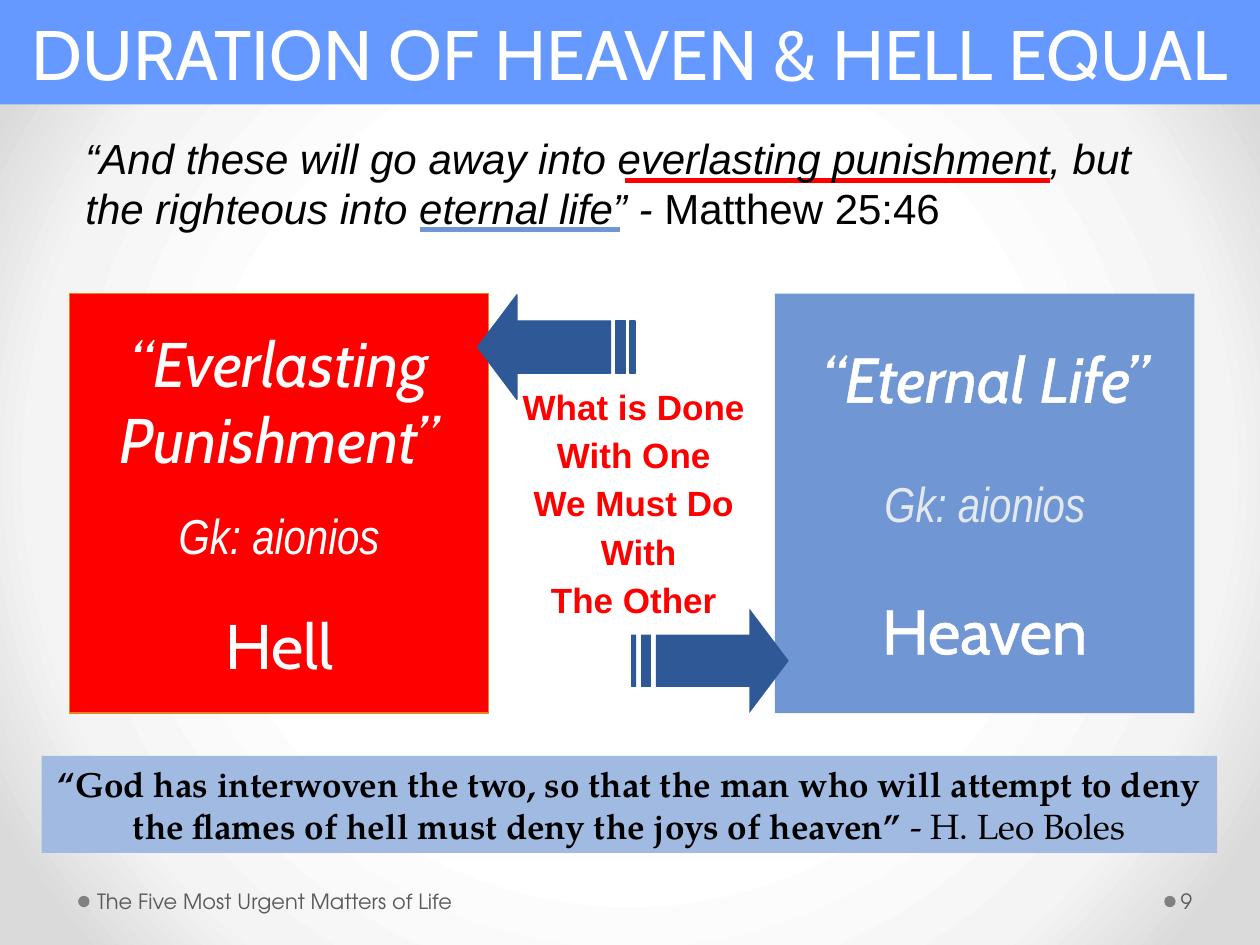
from lxml import etree
from pptx import Presentation
from pptx.dml.color import RGBColor
from pptx.enum.shapes import MSO_CONNECTOR as LINK, MSO_SHAPE as SHAPE
from pptx.enum.text import MSO_ANCHOR as ANCHOR, PP_ALIGN as ALIGN
from pptx.oxml import parse_xml
from pptx.oxml.ns import nsdecls, qn
from pptx.util import Inches, Pt

WHITE = RGBColor(0xFF, 0xFF, 0xFF)
BLACK = RGBColor(0, 0, 0)
RED = RGBColor(0xFF, 0, 0)
ORANGE = RGBColor(0xE6, 0x84, 0x22)
BANNER = RGBColor(0x66, 0x99, 0xFF)
BLUE = RGBColor(0x70, 0x97, 0xD3)
PALE_BLUE = RGBColor(0xA0, 0xBA, 0xE1)
NAVY = RGBColor(0x2F, 0x58, 0x97)
MIST = RGBColor(0xE4, 0xE9, 0xEF)
GREY = RGBColor(0x80, 0x80, 0x80)
DARK_GREY = RGBColor(0x59, 0x59, 0x59)

BODY, NARROW, HEAD = "Arial", "Arial Narrow", "Cabin"
SMALL, SERIF = "TeX Gyre Adventor", "TeX Gyre Pagella"


def inches(*lengths):
    return [Inches(length) for length in lengths]


def paint_background(page):
    stops = "".join(
        f'<a:gs pos="{share * 1000}"><a:srgbClr val="{color}"/></a:gs>'
        for share, color in [(50, "FFFFFF"), (76, "F4F4F4"), (92, "DADADA")])
    page.background.fill.gradient()
    old = page.background._cSld.find(".//" + qn("a:gradFill"))
    old.getparent().replace(old, parse_xml(
        f'<a:gradFill {nsdecls("a")} rotWithShape="1"><a:gsLst>{stops}</a:gsLst>'
        '<a:path path="circle"><a:fillToRect l="50000" t="50000" r="50000" b="50000"/>'
        '</a:path></a:gradFill>'))


def style(shape, fill, line=None):
    shape.shadow.inherit = False
    shape.fill.solid()
    shape.fill.fore_color.rgb = fill
    if line is None:
        shape.line.fill.background()
    else:
        shape.line.color.rgb = line
        shape.line.width = Pt(0.75)


def add_panel(page, box, fill, line=None, kind=SHAPE.RECTANGLE):
    panel = page.shapes.add_shape(kind, *inches(*box))
    style(panel, fill, line)
    return panel


def add_span(para, text, font, size, color, bold=False, italic=False):
    span = para.add_run()
    span.text = text
    span.font.name, span.font.size = font, Pt(size)
    span.font.bold, span.font.italic = bold, italic
    span.font.color.rgb = color
    return span


def set_frame(shape, anchor=ANCHOR.TOP, wrap=True, margins=(0.1, 0.05, 0.1, 0.05)):
    frame = shape.text_frame
    frame.word_wrap, frame.vertical_anchor = wrap, anchor
    (frame.margin_left, frame.margin_top,
     frame.margin_right, frame.margin_bottom) = inches(*margins)
    return frame


def next_para(frame, index, align=ALIGN.CENTER):
    para = frame.add_paragraph() if index else frame.paragraphs[0]
    para.alignment = align
    return para


def add_title(page, box, text):
    frame = set_frame(add_panel(page, box, BANNER), ANCHOR.MIDDLE, wrap=False)
    add_span(next_para(frame, 0), text, HEAD, 40, WHITE)


def add_underline(page, start, end, y, color):
    rule = page.shapes.add_connector(LINK.STRAIGHT, *inches(start, y, end, y))
    rule.line.color.rgb = color
    rule.line.width = Pt(3)
    etree.SubElement(rule._element.spPr, qn("a:effectLst"))


def add_verse(page, box):
    left, top, _, _ = box
    add_underline(page, left + 4.38, left + 7.75, top + 0.43, RED)
    add_underline(page, left + 2.75, left + 4.34, top + 0.82, BLUE)
    frame = set_frame(page.shapes.add_textbox(*inches(*box)))
    para = next_para(frame, 0, ALIGN.LEFT)
    add_span(para, "“And these will go away into everlasting punishment, but the "
             "righteous into eternal life” - ", BODY, 24, BLACK, italic=True)
    add_span(para, "Matthew 25:46", BODY, 24, BLACK)


def add_destiny(page, box, fill, line, quote, place, greek_color, gaps, outlined=False):
    """Square with a quoted phrase, its Greek word and the place it means."""
    frame = set_frame(add_panel(page, box, fill, line), ANCHOR.MIDDLE, wrap=False)
    rows = [(text, HEAD, 36, WHITE, True, 0) for text in quote]
    rows += [("Gk: aionios", NARROW, 28, greek_color, True, gaps[0]),
             (place, HEAD, 36, WHITE, False, gaps[1])]
    for index, (text, font, size, color, italic, gap) in enumerate(rows):
        para = next_para(frame, index)
        para.space_before = Pt(gap)
        span = add_span(para, text, font, size, color, italic=italic)
        if outlined:
            span.font._element.insert(0, parse_xml(
                f'<a:ln {nsdecls("a")} w="9525"><a:solidFill>'
                f'<a:srgbClr val="{WHITE}"/></a:solidFill></a:ln>'))


def add_striped_arrow(page, box, to_right, line=None):
    left, top, width, height = box
    low, high, neck = 0.25, 0.75, 0.75

    def bar(start, end):
        return [(start, low), (end, low), (end, high), (start, high)]

    head = [(neck, 0), (neck, low), (5 / 32, low), (5 / 32, high),
            (neck, high), (neck, 1), (1, 0.5)]
    outlines = [[(Inches(left + width * (x if to_right else 1 - x)),
                  Inches(top + height * y)) for x, y in outline]
                for outline in (head, bar(1 / 16, 1 / 8), bar(0, 1 / 32))]
    builder = page.shapes.build_freeform(*outlines[0][0])
    for index, outline in enumerate(outlines):
        if index:
            builder.move_to(*outline[0])
        builder.add_line_segments(outline[1:], close=True)
    style(builder.convert_to_shape(), NAVY, line)


def add_challenge(page, box, lines):
    frame = set_frame(page.shapes.add_textbox(*inches(*box)))
    for index, text in enumerate(lines):
        para = next_para(frame, index)
        para.line_spacing, para.space_before = 0.7, Pt(10.8)
        add_span(para, text, BODY, 20, RED, bold=True)


def add_quote(page, box):
    para = next_para(set_frame(add_panel(page, box, PALE_BLUE)), 0)
    add_span(para, "“God has interwoven the two, so that the man who will attempt to deny "
             "the flames of hell must deny the joys of heaven”", SERIF, 20, BLACK, bold=True)
    add_span(para, " - H. Leo Boles", SERIF, 20, BLACK)


def add_footer_note(page, box, text, margins):
    """Small text with a grey dot to its left."""
    left, top, _, _ = box
    add_panel(page, (left - 0.1, top + 0.16, 0.09, 0.09), GREY, kind=SHAPE.OVAL)
    frame = set_frame(page.shapes.add_textbox(*inches(*box)), ANCHOR.MIDDLE, margins=margins)
    add_span(next_para(frame, 0, ALIGN.LEFT), text, SMALL, 12, DARK_GREY)


def main():
    deck = Presentation()
    deck.slide_width, deck.slide_height = inches(10, 7.5)
    page = deck.slides.add_slide(deck.slide_layouts[6])
    paint_background(page)

    side, row = 3.33, 2.33
    add_verse(page, (0.58, 1, 8.92, 0.91))
    add_title(page, (0, 0, 10, 0.83), "DURATION OF HEAVEN & HELL EQUAL")
    add_destiny(page, (0.55, row, side, side), RED, ORANGE,
                ["“Everlasting", "Punishment”"], "Hell", WHITE, (17, 24))
    add_destiny(page, (6.15, row, side, side), BLUE, None,
                ["“Eternal Life”"], "Heaven", MIST, (33, 34), outlined=True)
    add_striped_arrow(page, (5.01, 4.83, 1.25, 0.83), to_right=True)
    add_striped_arrow(page, (3.79, 2.34, 1.25, 0.83), to_right=False, line=NAVY)
    add_challenge(page, (3.96, 3.1, 2.14, 1.95),
                  ["What is Done", "With One", "We Must Do", " With", "The Other"])
    add_quote(page, (0.33, 6, 9.33, 0.77))
    add_footer_note(page, (0.72, 6.95, 3.11, 0.4), "The Five Most Urgent Matters of Life",
                    (0.05, 0.05, 0.1, 0.05))
    add_footer_note(page, (9.34, 6.95, 0.61, 0.4), "9", (0.03, 0.05, 0.05, 0.05))
    deck.save("out.pptx")


if __name__ == "__main__":
    main()
